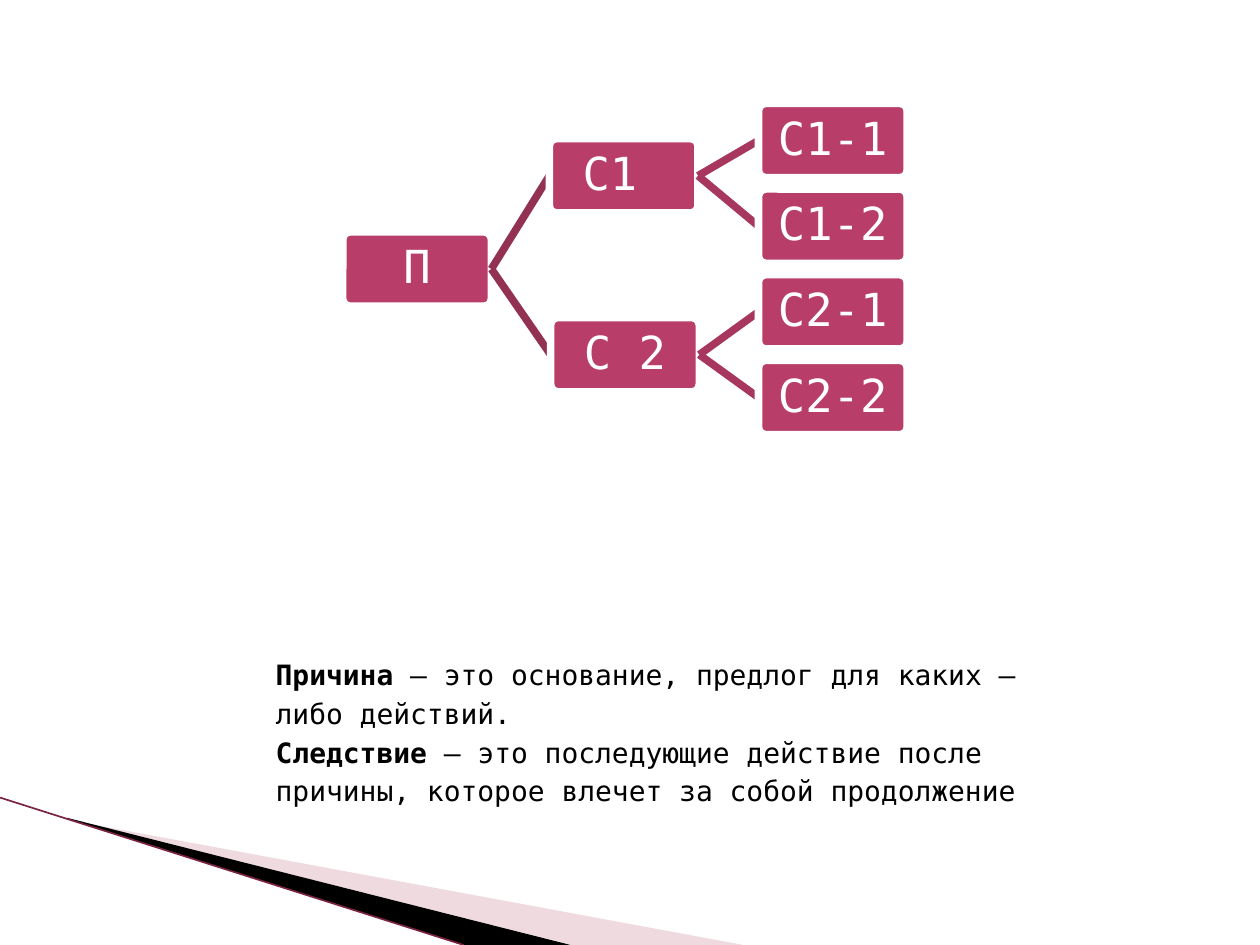
from lxml.etree import SubElement
from pptx import Presentation
from pptx.dml.color import RGBColor
from pptx.enum.shapes import MSO_CONNECTOR as Connector, MSO_SHAPE as Shape
from pptx.enum.text import MSO_ANCHOR as Anchor, PP_ALIGN as Align
from pptx.oxml.ns import qn
from pptx.util import Inches, Pt

COLUMNS, ROWS = 100, 75
RIGHT, LEFT = 3, 1


def color(value):
    return RGBColor.from_string(value)


class SlideBuilder:
    font = "DejaVu Sans Mono"
    box_fill, white, black = "B83D68", "FFFFFF", "000000"
    box_width, box_height = 11.8, 5.9
    branch_width = 4.33

    def __init__(self, presentation):
        self.slide = presentation.slides.add_slide(presentation.slide_layouts[6])
        self.column = presentation.slide_width // COLUMNS
        self.row = presentation.slide_height // ROWS

    def place(self, x, y):
        return round(x * self.column), round(y * self.row)

    def add_run(self, paragraph, text, size, ink, bold=False):
        run = paragraph.add_run()
        run.text = text
        run.font.name = self.font
        run.font.size = Pt(size)
        run.font.bold = bold
        run.font.color.rgb = color(ink)

    def wedge(self, points, fill, opacity=None):
        builder = self.slide.shapes.build_freeform(*self.place(*points[0]))
        builder.add_line_segments([self.place(*point) for point in points[1:]])
        shape = builder.convert_to_shape()
        shape.shadow.inherit = False
        shape.fill.solid()
        shape.fill.fore_color.rgb = color(fill)
        shape.line.fill.background()
        if opacity:
            tint = shape.fill._xPr.find(qn("a:solidFill"))[0]
            SubElement(tint, qn("a:alpha"), val=str(opacity * 1000))

    def line(self, start, end, ink, width):
        connector = self.slide.shapes.add_connector(
            Connector.STRAIGHT, *self.place(*start), *self.place(*end))
        connector.line.color.rgb = color(ink)
        connector.line.width = Pt(width)
        SubElement(connector._element.spPr, qn("a:effectLst"))
        return connector

    def block(self, kind, x, y, width, height, fill):
        shape = self.slide.shapes.add_shape(
            kind, *self.place(x, y), *self.place(width, height))
        shape.shadow.inherit = False
        shape.fill.solid()
        shape.fill.fore_color.rgb = color(fill)
        shape.line.fill.background()
        shape.text_frame.word_wrap = True
        shape.text_frame.vertical_anchor = Anchor.MIDDLE
        return shape

    def box(self, label, x, y):
        shape = self.block(Shape.ROUNDED_RECTANGLE, x, y,
                           self.box_width, self.box_height, self.box_fill)
        shape.adjustments[0] = 0.1
        shape.line.color.rgb = color(self.white)
        shape.line.width = Pt(self.branch_width)
        frame = shape.text_frame
        frame.margin_left = frame.margin_right = Inches(0.03)
        frame.margin_top = frame.margin_bottom = Inches(0.03)
        paragraph = frame.paragraphs[0]
        paragraph.alignment = Align.CENTER
        paragraph.line_spacing = 0.9
        self.add_run(paragraph, label, 26, self.white)
        return shape

    def tree(self, node, branch_colors):
        label, x, y, children = node
        parent = self.box(label, x, y)
        middle = self.box_height / 2
        for child in children:
            start = x + self.box_width, y + middle
            end = child[1], child[2] + middle
            branch = self.line(start, end, branch_colors[0], self.branch_width)
            branch.begin_connect(parent, RIGHT)
            branch.end_connect(self.tree(child, branch_colors[1:]), LEFT)
        return parent

    def definitions(self, entries, x, y, width, height):
        frame = self.block(Shape.RECTANGLE, x, y, width, height, self.white).text_frame
        for index, (term, meaning) in enumerate(entries):
            paragraph = frame.add_paragraph() if index else frame.paragraphs[0]
            paragraph.alignment = Align.LEFT
            paragraph.line_spacing = 1.15
            self.add_run(paragraph, term, 16, self.black, bold=True)
            self.add_run(paragraph, meaning, 16, self.black)


def main():
    presentation = Presentation()
    presentation.slide_width = Inches(10)
    presentation.slide_height = Inches(7.5)
    builder = SlideBuilder(presentation)

    builder.wedge([(5.5, 65.1), (59, 75), (45.4, 75), (5.5, 65)], "D8A3AF", 40)
    builder.wedge([(5.3, 64.9), (45.3, 75), (36.8, 75), (5.4, 65)], "000000")
    builder.line((0, 63.3), (36.8, 75), "7B2342", 0.95)

    leaf_names = ["С1-1", "С1-2", "С2-1", "С2-2"]
    leaves = [(name, 60.2, 8.2 + 6.8 * index, [])
              for index, name in enumerate(leaf_names)]
    effects = [("С1 ", 43.6, 11, leaves[:2]), ("С 2", 43.7, 25.2, leaves[2:])]
    builder.tree(("П", 27.2, 18.4, effects), ["933153", "A7375E"])

    builder.definitions([
        ("Причина", " – это основание, предлог для каких – либо действий."),
        ("Следствие", " – это последующие действие после причины, "
                      "которое влечет за собой продолжение"),
    ], 20.9, 50.1, 63, 15.7)

    presentation.save("out.pptx")


if __name__ == "__main__":
    main()
